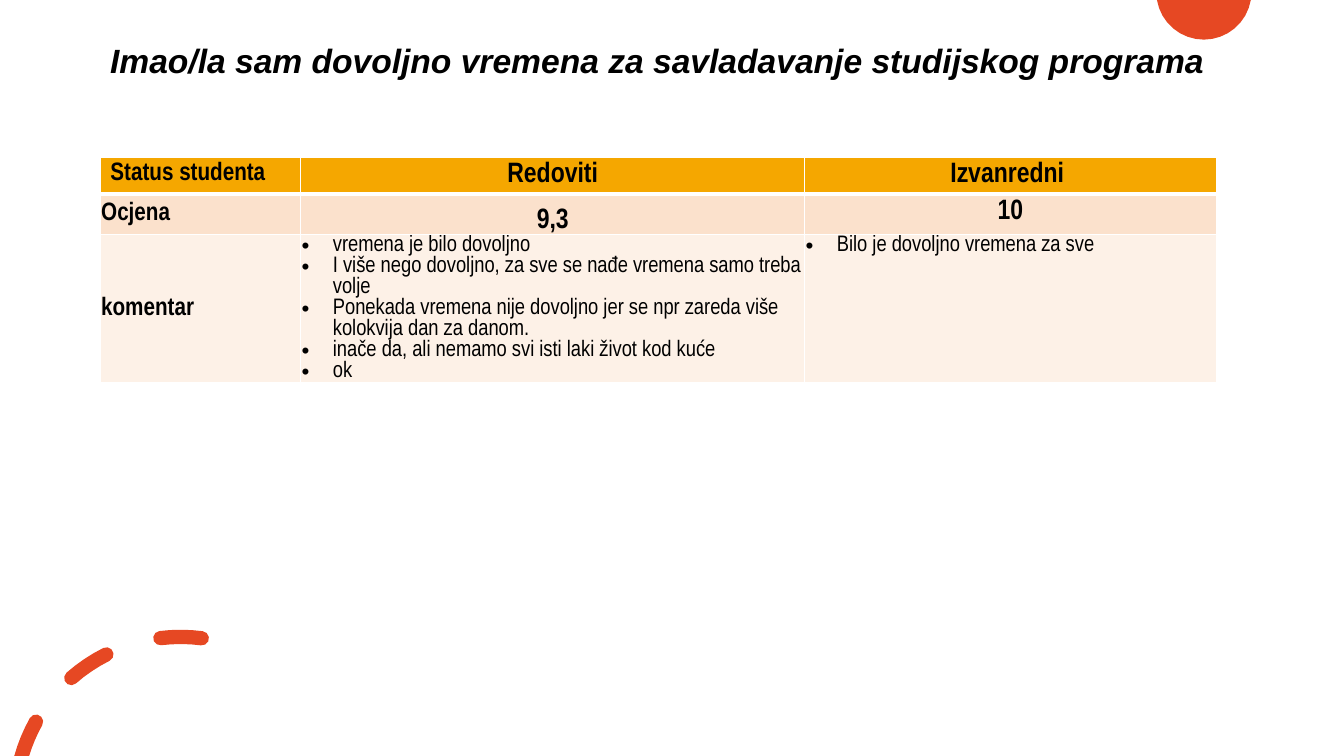
"""Build the slide on whether students had enough time for the programme."""
from math import asin, cos, degrees, radians, sin

from lxml.etree import SubElement
from pptx import Presentation
from pptx.dml.color import RGBColor
from pptx.enum.text import MSO_ANCHOR, MSO_AUTO_SIZE, PP_ALIGN
from pptx.oxml.ns import qn
from pptx.util import Cm, Pt

WIDE, HIGH = 33.87, 19.05
RED, BLACK, WHITE = "E64823", "000000", "FFFFFF"
TITLE = "Imao/la sam dovoljno vremena za savladavanje studijskog programa"
HEAD = ["Status studenta", "Redoviti", "Izvanredni "]
GRADE = ["Ocjena", "9,3", "10"]
NOTES = [
    "komentar",
    [
        "vremena je bilo dovoljno",
        "I više nego dovoljno, za sve se nađe vremena samo treba volje",
        "Ponekada vremena nije dovoljno jer se npr zareda više kolokvija dan za danom.",
        "inače da, ali nemamo svi isti laki život kod kuće",
        "ok",
    ],
    ["Bilo je dovoljno vremena za sve"],
]
ROWS = [HEAD, GRADE, NOTES]
FILLS = ["F5A700", "FBE1CC", "FDF1E7"]
COLS = [5.05, 12.7, 10.37]
TALL = [0.66, 1.03, 2.36]
TOP, MID, LOW = MSO_ANCHOR.TOP, MSO_ANCHOR.MIDDLE, MSO_ANCHOR.BOTTOM
ANCHORS = [[TOP, TOP, TOP], [MID, LOW, TOP], [MID, TOP, TOP]]
ROOMY = [(0, 0), (0, 1), (0, 2), (1, 2)]
SUN = (30.34, -0.2, 1.2)
RING = (4.55, 20.22, 4.17)
CAP = 0.18
DASHES = [(150.8, 180), (116.6, 131.3), (82.6, 97)]


def color(code):
    return RGBColor.from_string(code)


def write(para, text, size, font, bold=True, slant=False):
    run = para.add_run()
    run.text = text
    face = run.font
    face.name, face.size, face.bold, face.italic = font, Pt(size), bold, slant
    face.color.rgb = color(BLACK)


def arc(x, y, size, start, end, steps):
    turns = [radians(start + (end - start) * i / steps) for i in range(steps + 1)]
    return [(x + size * cos(t), y - size * sin(t)) for t in turns]


def draw(slide, loops):
    loops = [[(Cm(x), Cm(y)) for x, y in loop] for loop in loops]
    pen = slide.shapes.build_freeform(*loops[0][0], scale=1.0)
    for i, loop in enumerate(loops):
        if i:
            pen.move_to(*loop[0])
        pen.add_line_segments(loop[1:], close=True)
    shape = pen.convert_to_shape()
    shape.shadow.inherit = False
    shape.fill.solid()
    shape.fill.fore_color.rgb = color(RED)
    shape.line.fill.background()


def dash(low, high):
    x, y, size = RING
    outer, inner = size + CAP, size - CAP
    stops = [min(high, 180 - degrees(asin((y - HIGH) / r))) for r in (outer, inner)]
    start, end = [arc(x, y, size, a, a, 1)[0] for a in (low, high)]
    round_end = arc(*end, CAP, high, high + 180, 5)[1:-1] if stops[0] == high else []
    return (arc(x, y, outer, low, stops[0], 4) + round_end
            + arc(x, y, inner, stops[1], low, 4)
            + arc(*start, CAP, low + 180, low + 360, 5)[1:-1])


def border(cell, row):
    props = cell._tc.get_or_add_tcPr()
    widths = {"L": 1, "R": 1, "T": 3 if row == 1 else 1, "B": 3 if row == 0 else 1}
    for spot, (side, width) in enumerate(widths.items()):
        line = SubElement(props, qn("a:ln" + side), w=str(Pt(width)))
        fill = SubElement(line, qn("a:solidFill"))
        SubElement(fill, qn("a:srgbClr"), val=WHITE)
        props.insert(spot, line)


def bullet(para):
    props = para._p.get_or_add_pPr()
    props.set("marL", str(Cm(0.79)))
    props.set("indent", str(-Cm(0.79)))
    SubElement(props, qn("a:buFont"), typeface="Arial")
    SubElement(props, qn("a:buChar"), char="•")


def fill_cell(cell, row, col):
    cell.fill.solid()
    cell.fill.fore_color.rgb = color(FILLS[row])
    border(cell, row)
    cell.vertical_anchor = ANCHORS[row][col]
    if (row, col) not in ROOMY:
        cell.margin_left = cell.margin_right = cell.margin_top = Cm(0.02)
        cell.margin_bottom = 0
    text, frame = ROWS[row][col], cell.text_frame
    if isinstance(text, str):
        para = frame.paragraphs[0]
        para.alignment = PP_ALIGN.CENTER if col else PP_ALIGN.LEFT
        write(para, text, 20 if col else 18, "Arial Narrow")
        return
    for i, item in enumerate(text):
        para = frame.add_paragraph() if i else frame.paragraphs[0]
        bullet(para)
        write(para, item, 16, "Arial Narrow", bold=False)


def main():
    deck = Presentation()
    deck.slide_width, deck.slide_height = Cm(WIDE), Cm(HIGH)
    slide = deck.slides.add_slide(deck.slide_layouts[5])

    x, y, size = SUN
    tilt = degrees(asin(-y / size))
    draw(slide, [arc(x, y, size, 180 + tilt, 360 - tilt, 16)])
    draw(slide, [dash(low, high) for low, high in DASHES])

    title = slide.shapes.title
    title.left, title.top, title.width, title.height = Cm(2.52), Cm(0.55), Cm(29.21), Cm(2.05)
    frame = title.text_frame
    frame.auto_size, frame.vertical_anchor = MSO_AUTO_SIZE.NONE, MID
    para = frame.paragraphs[0]
    para.alignment, para.line_spacing = PP_ALIGN.LEFT, 0.9
    write(para, TITLE, 24, "Arial", slant=True)

    grid = slide.shapes.add_table(
        len(ROWS), len(COLS), Cm(2.53), Cm(3.96), Cm(sum(COLS)), Cm(sum(TALL)))
    table = grid.table
    for col, width in enumerate(COLS):
        table.columns[col].width = Cm(width)
    for row, height in enumerate(TALL):
        table.rows[row].height = Cm(height)
        for col in range(len(COLS)):
            fill_cell(table.cell(row, col), row, col)
    grid.height = Cm(6.96)

    deck.save("out.pptx")


if __name__ == "__main__":
    main()
